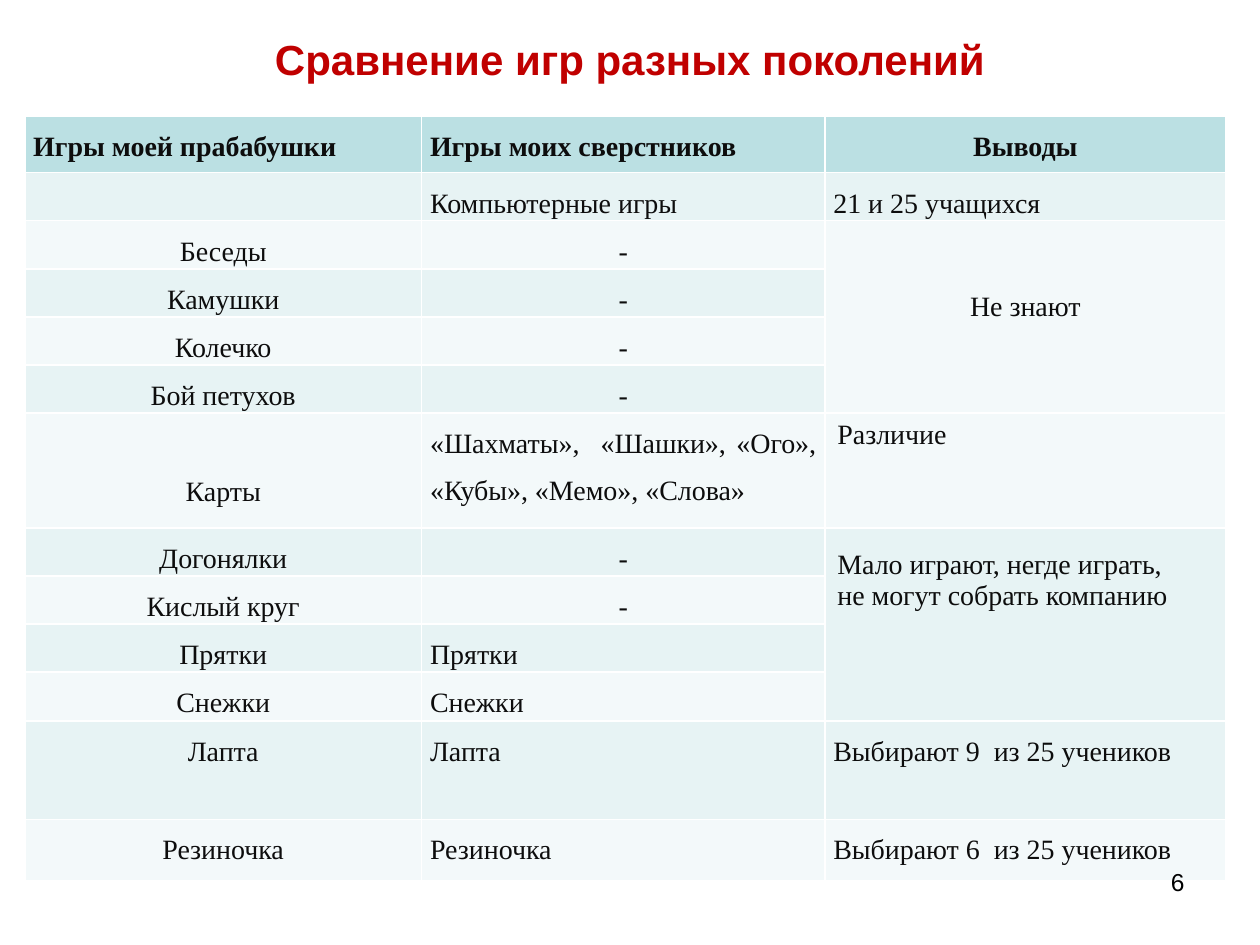
from dataclasses import dataclass

from pptx import Presentation
from pptx.dml.color import RGBColor
from pptx.enum import text
from pptx.util import Cm, Pt

COLORS = {
    "title": "C00000",
    "ink": "0D0D0D",
    "number": "000000",
    "header": "BBE0E3",
    "odd": "E7F3F4",
    "even": "F3F9FA",
}
LEFT, CENTER, RIGHT, JUSTIFY = (
    text.PP_ALIGN.LEFT,
    text.PP_ALIGN.CENTER,
    text.PP_ALIGN.RIGHT,
    text.PP_ALIGN.JUSTIFY,
)
COLUMN_WIDTHS = (8, 8.13, 8.08)
ROW_HEIGHT = 0.97
TALL_ROWS = {0: 1.14, 6: 2.31, 10: 0.99, 11: 1.98, 12: 1.24}


@dataclass
class Verdict:
    """An entry of the conclusions column, which may cover several rows."""
    row: int
    lines: tuple
    align: int = JUSTIFY
    spacings: tuple = (1.5,)
    side: float = 0.17
    top: float = 0
    rows: int = 1


GAMES = [
    ("", "Компьютерные игры"),
    ("Беседы", "-"),
    ("Камушки", "-"),
    ("Колечко", "-"),
    ("Бой петухов", "-"),
    ("Карты", "«Шахматы»,  «Шашки», «Ого», «Кубы», «Мемо», «Слова»"),
    ("Догонялки", "-"),
    ("Кислый круг", "-"),
    ("Прятки", "Прятки"),
    ("Снежки", "Снежки"),
    ("Лапта", "Лапта"),
    ("Резиночка", "Резиночка"),
]
VERDICTS = [
    Verdict(1, ("21 и 25 учащихся",)),
    Verdict(2, ("Не знают",), CENTER, (1,), 0.25, 1.42, 4),
    Verdict(6, ("Различие",), LEFT, (1,), 0.25, 0.13),
    Verdict(7, ("Мало играют, негде играть,", "не могут собрать компанию"),
            LEFT, (1.5, 1), 0.25, 0.13, 4),
    Verdict(11, ("Выбирают 9  из 25 учеников",)),
    Verdict(12, ("Выбирают 6  из 25 учеников",)),
]


def color(name: str) -> RGBColor:
    return RGBColor.from_string(COLORS[name])


def write(para, words: str, *, font="Times New Roman", size=16, ink="ink",
          bold=False, align=LEFT, spacing=1.0) -> None:
    para.alignment = align
    para.line_spacing = spacing
    span = para.add_run()
    span.text = words
    span.font.name = font
    span.font.size = Pt(size)
    span.font.bold = bold
    span.font.color.rgb = color(ink)


def fill_cell(cell, lines: tuple, *, align=CENTER, spacings=(1.5,),
              side=0.17, top=0.0, bold=False) -> None:
    cell.margin_left = cell.margin_right = Cm(side)
    cell.margin_top = Cm(top)
    frame = cell.text_frame
    for index, (line, spacing) in enumerate(zip(lines, spacings)):
        para = frame.add_paragraph() if index else frame.paragraphs[0]
        write(para, line, align=align, spacing=spacing, bold=bold)


def add_title(page) -> None:
    title = page.shapes.title
    title.left, title.top = Cm(1.27), Cm(0.33)
    title.width, title.height = Cm(22.86), Cm(1.19)
    title.text_frame.vertical_anchor = text.MSO_ANCHOR.MIDDLE
    write(title.text_frame.paragraphs[0], "Сравнение игр разных поколений",
          font="Arial", size=24, ink="title", bold=True, align=CENTER, spacing=1.5)


def add_games_table(page) -> None:
    heights = [TALL_ROWS.get(row, ROW_HEIGHT) for row in range(len(GAMES) + 1)]
    table = page.shapes.add_table(
        len(heights), len(COLUMN_WIDTHS), Cm(0.5), Cm(2.34),
        Cm(sum(COLUMN_WIDTHS)), Cm(sum(heights))).table
    for column, width in zip(table.columns, COLUMN_WIDTHS):
        column.width = Cm(width)
    for index, (row, height) in enumerate(zip(table.rows, heights)):
        row.height = Cm(height)
        shade = "header" if index == 0 else "odd" if index % 2 else "even"
        for cell in row.cells:
            cell.margin_top = cell.margin_bottom = 0
            cell.fill.solid()
            cell.fill.fore_color.rgb = color(shade)

    headings = (("Игры моей прабабушки", LEFT),
                ("Игры моих сверстников", JUSTIFY), ("Выводы", CENTER))
    for column, (heading, align) in enumerate(headings):
        fill_cell(table.cell(0, column), (heading,), align=align, bold=True)

    for row, (old, new) in enumerate(GAMES, start=1):
        if old:
            # The card games stand level with the second line beside them.
            fill_cell(table.cell(row, 0), (old,), top=0.97 if old == "Карты" else 0)
        fill_cell(table.cell(row, 1), (new,), align=CENTER if new == "-" else JUSTIFY)

    for verdict in VERDICTS:
        cell = table.cell(verdict.row, 2)
        if verdict.rows > 1:
            cell.merge(table.cell(verdict.row + verdict.rows - 1, 2))
        fill_cell(cell, verdict.lines, align=verdict.align,
                  spacings=verdict.spacings, side=verdict.side, top=verdict.top)


def add_page_number(page) -> None:
    box = page.shapes.add_textbox(Cm(18.2), Cm(17.35), Cm(5.93), Cm(1.32))
    box.text_frame.word_wrap = True
    write(box.text_frame.paragraphs[0], "6", font="Arial", size=14,
          ink="number", align=RIGHT)


def main() -> None:
    deck = Presentation()
    deck.slide_width, deck.slide_height = Cm(25.4), Cm(19.05)
    page = deck.slides.add_slide(deck.slide_layouts[5])
    add_title(page)
    add_games_table(page)
    add_page_number(page)
    deck.save("out.pptx")


if __name__ == "__main__":
    main()
